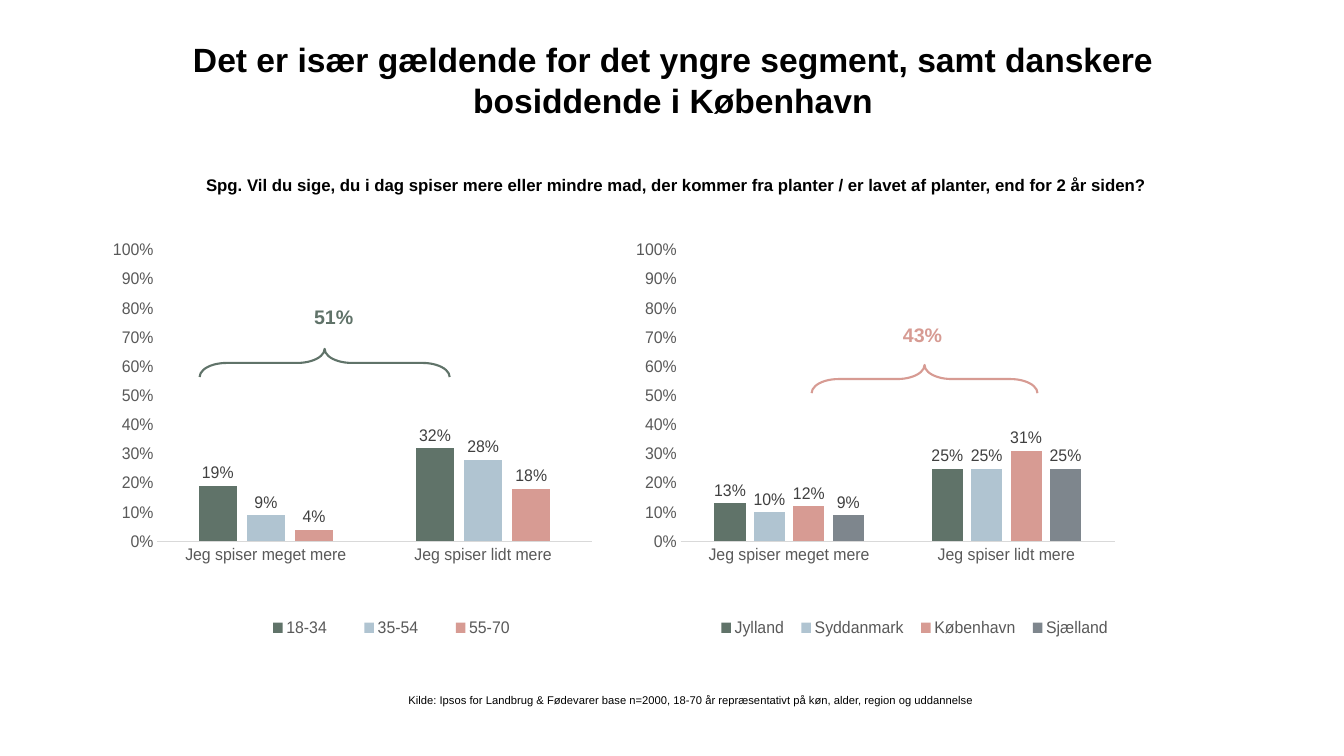
"""Build the slide on who eats more plant-based food, by age and by region."""
from dataclasses import dataclass

from pptx import Presentation
from pptx import util as u
from pptx.chart.data import CategoryChartData
from pptx.dml.color import RGBColor
from pptx.enum import chart as ch, shapes, text
from pptx.oxml import parse_xml
from pptx.oxml.ns import nsdecls, qn

PX = 9144
FONT = "Arial"
COLOURS = {
    "black": "000000", "label": "404040", "axis": "595959", "baseline": "D9D9D9",
    "green": "607369", "blue": "B0C4D1", "rose": "D79B93", "grey": "7E868D",
}
SERIES_COLOURS = ("green", "blue", "rose", "grey")
ANSWERS = ("Jeg spiser meget mere", "Jeg spiser lidt mere")
PLOT_AREA = (0.037, 0.033, 0.952, 0.557)

Box = tuple[int, int, int, int]


@dataclass(frozen=True)
class Breakdown:
    """A chart of answers with a brace that sums up one group."""
    left: int
    groups: dict[str, tuple[float, float]]
    legend_area: tuple[float, float, float, float]
    colour: str
    brace: Box
    total: str
    total_box: Box


BREAKDOWNS = (
    Breakdown(112, {"18-34": (0.19, 0.32), "35-54": (0.09, 0.28), "55-70": (0.04, 0.18)},
              (0.22, 0.725, 0.66, 0.06), "green",
              (308, 236, 28, 248), "51%", (229, 303, 204, 24)),
    Breakdown(631, {"Jylland": (0.13, 0.25), "Syddanmark": (0.1, 0.25),
                    "København": (0.12, 0.31), "Sjælland": (0.09, 0.25)},
              (0.1, 0.725, 0.91, 0.06), "rose",
              (903, 264, 28, 224), "43%", (813, 320, 204, 24)),
)


def rgb(name: str) -> RGBColor:
    """Return a named colour."""
    return RGBColor.from_string(COLOURS[name])


def emu(box: Box) -> list[int]:
    """Scale a box from px to EMU."""
    return [side * PX for side in box]


def style(font, size: int, colour: str, bold: bool = False) -> None:
    """Set the typeface, size, colour and weight of a font."""
    font.name, font.size, font.bold = FONT, u.Pt(size), bold
    font.color.rgb = rgb(colour)


def write(shape, content: str, *, box: Box, size: int, colour: str = "black",
          bold: bool = False, inset: bool = False) -> None:
    """Place a shape and fill it with one centred paragraph."""
    shape.left, shape.top, shape.width, shape.height = emu(box)
    frame = shape.text_frame
    frame.word_wrap = True
    frame.auto_size = text.MSO_AUTO_SIZE.SHAPE_TO_FIT_TEXT
    frame.vertical_anchor = text.MSO_ANCHOR.TOP
    if not inset:
        frame.margin_left = frame.margin_top = frame.margin_right = frame.margin_bottom = 0
    paragraph = frame.paragraphs[0]
    paragraph.alignment = text.PP_ALIGN.CENTER
    run = paragraph.add_run()
    run.text = content
    style(run.font, size, colour, bold)


def set_layout(parent, index: int, area: tuple[float, float, float, float],
               inner: bool = False) -> None:
    """Fix the place of a chart part as fractions of the chart."""
    for old in parent.findall(qn("c:layout")):
        parent.remove(old)
    target = '<c:layoutTarget val="inner"/>' if inner else ""
    modes = "".join(f'<c:{side}Mode val="edge"/>' for side in "xy")
    sizes = "".join(f'<c:{side} val="{part}"/>' for side, part in zip("xywh", area))
    parent.insert(index, parse_xml(
        f'<c:layout {nsdecls("c")}><c:manualLayout>{target}{modes}{sizes}'
        "</c:manualLayout></c:layout>"))


def format_axes(chart) -> None:
    """Format the answer axis and the percentage axis."""
    for axis in (chart.category_axis, chart.value_axis):
        axis.major_tick_mark = axis.minor_tick_mark = ch.XL_TICK_MARK.NONE
        axis.has_major_gridlines = False
        style(axis.tick_labels.font, 12, "axis")
    baseline = chart.category_axis.format.line
    baseline.color.rgb = rgb("baseline")
    baseline.width = u.Pt(0.75)
    percent = chart.value_axis
    percent.minimum_scale, percent.maximum_scale, percent.major_unit = 0, 1, 0.1
    percent.tick_labels.number_format = "0%"
    percent.tick_labels.number_format_is_linked = False
    percent.format.line.fill.background()


def add_breakdown_chart(slide, breakdown: Breakdown) -> None:
    """Draw the column chart of one breakdown."""
    data = CategoryChartData(number_format="0%")
    data.categories = ANSWERS
    for group, shares in breakdown.groups.items():
        data.add_series(group, shares)
    chart = slide.shapes.add_chart(
        ch.XL_CHART_TYPE.COLUMN_CLUSTERED,
        *emu((breakdown.left, 231, 480, 519)), data).chart
    chart.has_title = False
    style(chart.font, 10, "black")
    format_axes(chart)

    plot = chart.plots[0]
    plot.gap_width, plot.overlap, plot.vary_by_categories = 219, -27, False
    for series, colour in zip(plot.series, SERIES_COLOURS):
        series.format.fill.solid()
        series.format.fill.fore_color.rgb = rgb(colour)
        series.invert_if_negative = False
        labels = series.data_labels
        labels.show_value = True
        labels.position = ch.XL_LABEL_POSITION.OUTSIDE_END
        labels.number_format, labels.number_format_is_linked = "0%", False
        style(labels.font, 12, "label")

    chart.has_legend = True
    legend = chart.legend
    legend.position = ch.XL_LEGEND_POSITION.BOTTOM
    legend.include_in_layout = False
    style(legend.font, 12, "axis")
    set_layout(legend._element, 1, breakdown.legend_area)
    set_layout(chart._chartSpace.chart.plotArea, 0, PLOT_AREA, inner=True)


def add_total(slide, breakdown: Breakdown) -> None:
    """Draw the brace and the total above it."""
    brace = slide.shapes.add_shape(shapes.MSO_SHAPE.RIGHT_BRACE, *emu(breakdown.brace))
    brace.rotation = 270
    brace.adjustments[0], brace.adjustments[1] = 0.963, 0.5
    brace.shadow.inherit = False
    brace.fill.background()
    brace.line.color.rgb = rgb(breakdown.colour)
    brace.line.width = u.Pt(1.5)
    total = slide.shapes.add_textbox(*emu(breakdown.total_box))
    write(total, breakdown.total, box=breakdown.total_box, size=14,
          colour=breakdown.colour, bold=True)


def main() -> None:
    """Build and save the slide."""
    deck = Presentation()
    deck.slide_width, deck.slide_height = 1333 * PX, 750 * PX
    slide = deck.slides.add_slide(deck.slide_layouts.get_by_name("Title Only"))
    write(slide.shapes.title,
          "Det er især gældende for det yngre segment, samt danskere bosiddende i København",
          box=(148, 34, 1039, 91), size=24, bold=True, inset=True)
    question, source = (slide.shapes.add_textbox(0, 0, PX, PX) for _ in range(2))
    write(question,
          "Spg. Vil du sige, du i dag spiser mere eller mindre mad, der kommer fra planter"
          " / er lavet af planter, end for 2 år siden?",
          box=(130, 173, 1082, 20), size=12, bold=True)
    write(source,
          "Kilde: Ipsos for Landbrug & Fødevarer base n=2000, 18-70 år repræsentativt på køn,"
          " alder, region og uddannelse",
          box=(280, 688, 811, 13), size=8)
    for breakdown in BREAKDOWNS:
        add_breakdown_chart(slide, breakdown)
        add_total(slide, breakdown)
    deck.save("out.pptx")


if __name__ == "__main__":
    main()
